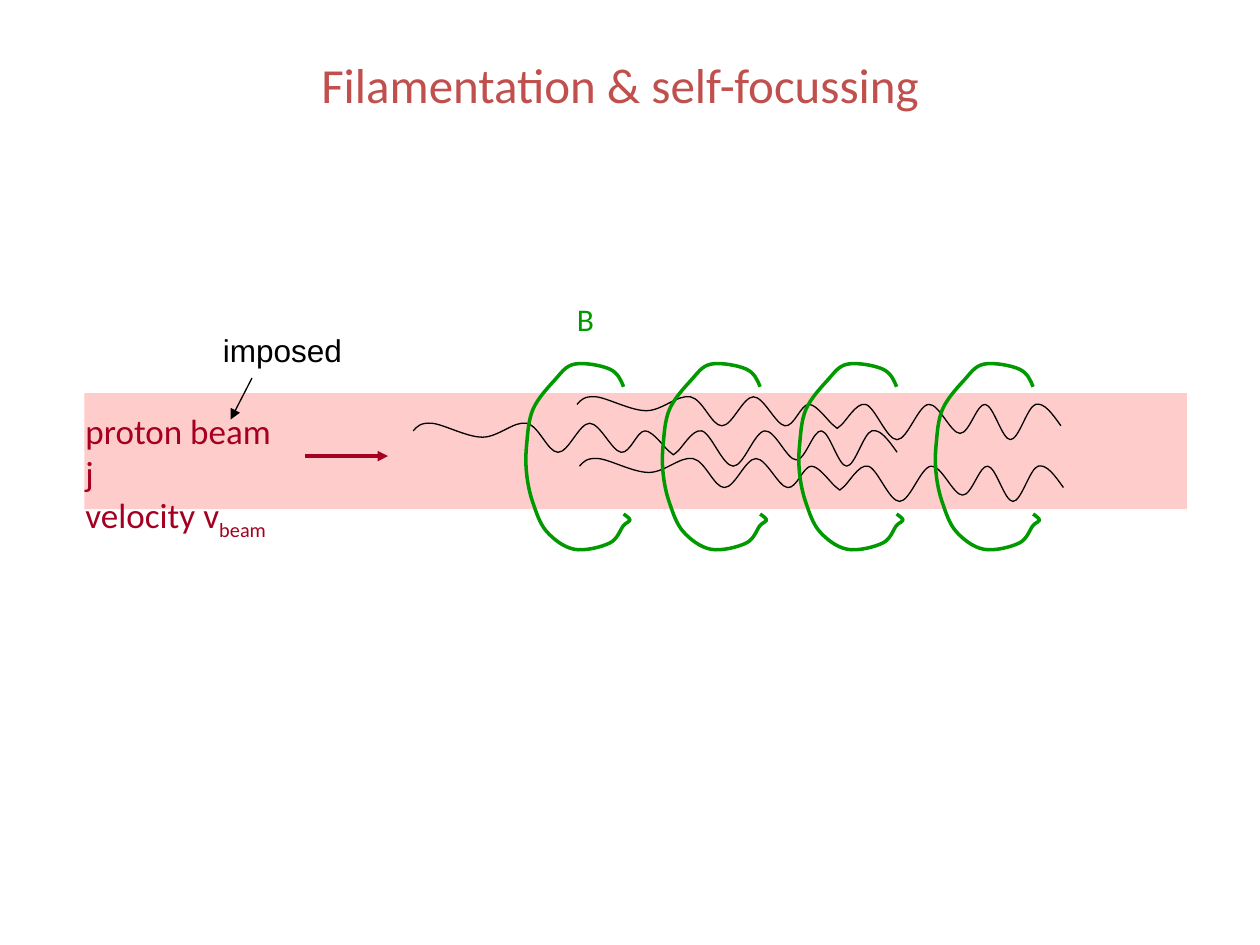
from dataclasses import dataclass

from lxml.etree import SubElement
from pptx import Presentation
from pptx.dml.color import RGBColor
from pptx.enum.shapes import MSO_CONNECTOR, MSO_SHAPE
from pptx.enum.text import MSO_ANCHOR, PP_ALIGN
from pptx.oxml.ns import qn
from pptx.util import Inches, Pt


@dataclass(frozen=True)
class Theme:
    title: str = "C0504D"
    band: str = "FFCCCC"
    beam: str = "A50021"
    field: str = "009900"
    ink: str = "000000"
    font: str = "Calibri"
    note_font: str = "Arial"
    title_size: int = 28
    beam_size: int = 20
    label_size: int = 18
    thin: float = 0.75
    thick: float = 2


# Knots of the curves, in inches from each curve's top left corner
FILAMENT = [(3.84, 0.25), (3.64, 0.08), (3.44, 0.36), (3.24, 0.08), (3.04, 0.31),
            (2.79, 0.08), (2.54, 0.36), (2.29, 0.08), (2.09, 0.25), (2.04, 0.25),
            (1.84, 0.08), (1.65, 0.25), (1.4, 0.02), (1.15, 0.25), (0.9, 0.02),
            (0.55, 0.13), (0.15, 0.02), (0, 0.08)]
FIELD_LOOP = [(0.78, 0.2), (0.67, 0.06), (0.39, 0.02), (0.23, 0.15), (0.06, 0.38),
              (0.01, 0.66), (0.01, 0.89), (0.06, 1.12), (0.17, 1.35), (0.39, 1.49),
              (0.67, 1.44), (0.78, 1.3), (0.83, 1.26), (0.78, 1.21)]


def midpoint(a, b):
    return (a[0] + b[0]) / 2, (a[1] + b[1]) / 2


def smooth_points(knots):
    """Bezier points (two handles, then a knot) of a smooth curve through knots."""
    handles = []
    for before, knot, after in zip(knots, knots[1:], knots[2:]):
        dx, dy = (after[0] - before[0]) / 6, (after[1] - before[1]) / 6
        handles += [(knot[0] - dx, knot[1] - dy), (knot[0] + dx, knot[1] + dy)]
    handles = [midpoint(knots[0], handles[0]), *handles,
               midpoint(handles[-1], knots[-1])]
    points = []
    for first, second, knot in zip(handles[::2], handles[1::2], knots[1:]):
        points += [first, second, knot]
    return points


class Sketch:
    def __init__(self, slide, theme):
        self.slide, self.theme = slide, theme

    def style_font(self, font, color, size, name=None):
        font.name = name or self.theme.font
        font.size = Pt(size)
        font.color.rgb = RGBColor.from_string(color)

    def title(self, text, x, y, w, h):
        sp = self.slide.shapes.title
        sp.left, sp.top, sp.width, sp.height = map(Inches, (x, y, w, h))
        tf = sp.text_frame
        tf.vertical_anchor = MSO_ANCHOR.MIDDLE
        p = tf.paragraphs[0]
        p.text = text
        p.alignment = PP_ALIGN.CENTER
        self.style_font(p.font, self.theme.title, self.theme.title_size)

    def band(self, x, y, w, h):
        sp = self.slide.shapes.add_shape(MSO_SHAPE.RECTANGLE, *map(Inches, (x, y, w, h)))
        sp.shadow.inherit = False
        sp.fill.solid()
        sp.fill.fore_color.rgb = RGBColor.from_string(self.theme.band)
        sp.line.fill.background()

    def label(self, lines, x, y, w, h, color, size, font=None):
        tf = self.slide.shapes.add_textbox(*map(Inches, (x, y, w, h))).text_frame
        tf.word_wrap = True
        for i, line in enumerate(lines):
            p = tf.add_paragraph() if i else tf.paragraphs[0]
            p.text = line
            self.style_font(p.font, color, size, font)
        return tf

    def arrow(self, start, end, color, width):
        line = self.slide.shapes.add_connector(
            MSO_CONNECTOR.STRAIGHT, *map(Inches, (*start, *end)))
        line.line.color.rgb = RGBColor.from_string(color)
        line.line.width = Pt(width)
        SubElement(line.line._get_or_add_ln(), qn("a:tailEnd"), type="triangle")
        SubElement(line._element.spPr, qn("a:effectLst"))

    def curve(self, knots, x, y, color, width):
        points = [(Inches(x + dx), Inches(y + dy))
                  for dx, dy in [knots[0], *smooth_points(knots)]]
        builder = self.slide.shapes.build_freeform(*points[0])
        builder.add_line_segments(points[1:], close=False)
        sp = builder.convert_to_shape()
        # Turn each three line segments into one cubic curve
        steps = list(sp._element.iter(qn("a:lnTo")))
        outline = steps[0].getparent()
        for i in range(0, len(steps), 3):
            cubic = SubElement(outline, qn("a:cubicBezTo"))
            for step in steps[i:i + 3]:
                cubic.append(step[0])
                outline.remove(step)
        sp.shadow.inherit = False
        sp.fill.background()
        sp.line.color.rgb = RGBColor.from_string(color)
        sp.line.width = Pt(width)


def main():
    prs = Presentation()
    prs.slide_width, prs.slide_height = Inches(10), Inches(7.5)
    theme = Theme()
    sketch = Sketch(prs.slides.add_slide(prs.slide_layouts[5]), theme)
    sketch.title("Filamentation & self-focussing", 0.67, 0.25, 8.5, 0.83)

    # Proton beam
    sketch.band(0.67, 3.12, 8.75, 0.92)
    tf = sketch.label(["proton beam\vj", "velocity v"], 0.58, 3.2, 1.81, 1.1,
                      theme.beam, theme.beam_size)
    r = tf.paragraphs[1].add_run()
    r.text = "beam"
    r.font._element.set("baseline", "-25000")
    sketch.arrow((2.42, 3.62), (3.08, 3.62), theme.beam, theme.thick)

    # Filaments
    for x, y in [(4.6, 3.62), (3.28, 3.34), (4.58, 3.13)]:
        sketch.curve(FILAMENT, x, y, theme.ink, theme.thin)

    # Magnetic field loops, evenly spaced along the beam
    for i in range(4):
        sketch.curve(FIELD_LOOP, 4.17 + i * 3.25 / 3, 2.87, theme.field, theme.thick)
    sketch.label(["B"], 4.48, 2.33, 0.42, 0.5, theme.field, theme.label_size)

    # Note on the beam
    sketch.label(["imposed"], 1.67, 2.58, 1.27, 0.4, theme.ink, theme.label_size,
                 theme.note_font)
    sketch.arrow((2, 3), (1.83, 3.33), theme.ink, theme.thin)

    prs.save("out.pptx")


if __name__ == "__main__":
    main()
